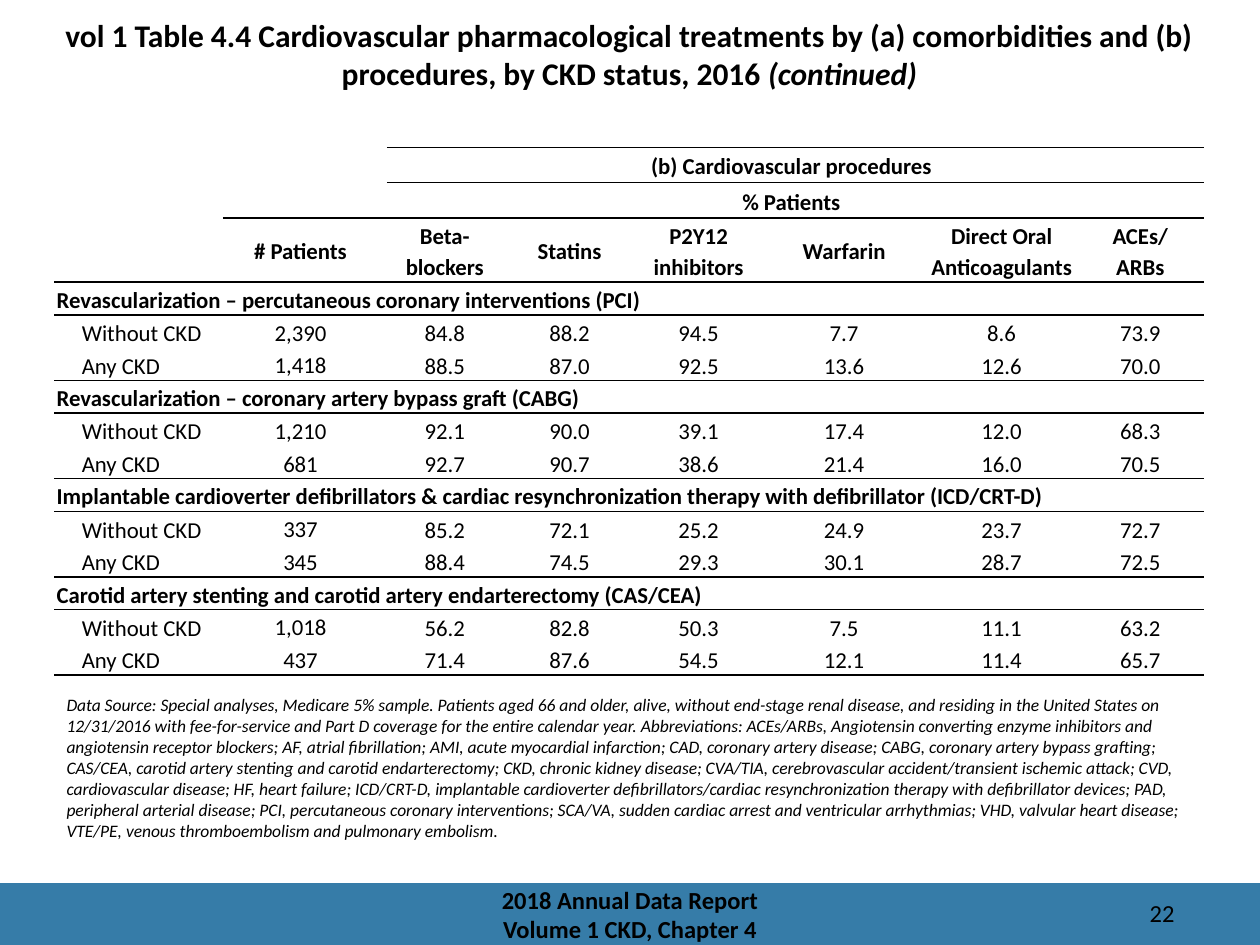
from typing import NamedTuple

import pptx
import pptx.dml.color
import pptx.enum.shapes
import pptx.enum.text
import pptx.oxml
import pptx.oxml.ns
import pptx.util
from pptx.util import Inches

Align = pptx.enum.text.PP_ALIGN
Anchor = pptx.enum.text.MSO_ANCHOR
BLACK, BLUE = "000000", "367CA8"
NO_STYLE = "{2D5ABB26-0587-4C30-8999-92F81FD0307C}"


class Procedure(NamedTuple):
    name: str
    without_ckd: list[str]
    any_ckd: list[str]


class Rule(NamedTuple):
    row: int
    first_column: int
    side: str


DRUGS = ["# Patients", "Beta- blockers", "Statins", "P2Y12 inhibitors",
         "Warfarin", "Direct Oral Anticoagulants", "ACEs/\nARBs"]
PROCEDURES = [
    Procedure("Revascularization – percutaneous coronary interventions (PCI)",
              ["2,390", "84.8", "88.2", "94.5", "7.7", "8.6", "73.9"],
              ["1,418", "88.5", "87.0", "92.5", "13.6", "12.6", "70.0"]),
    Procedure("Revascularization – coronary artery bypass graft (CABG)",
              ["1,210", "92.1", "90.0", "39.1", "17.4", "12.0", "68.3"],
              ["681", "92.7", "90.7", "38.6", "21.4", "16.0", "70.5"]),
    Procedure("Implantable cardioverter defibrillators & cardiac resynchronization "
              "therapy with defibrillator (ICD/CRT-D)",
              ["337", "85.2", "72.1", "25.2", "24.9", "23.7", "72.7"],
              ["345", "88.4", "74.5", "29.3", "30.1", "28.7", "72.5"]),
    Procedure("Carotid artery stenting and carotid artery endarterectomy (CAS/CEA)",
              ["1,018", "56.2", "82.8", "50.3", "7.5", "11.1", "63.2"],
              ["437", "71.4", "87.6", "54.5", "12.1", "11.4", "65.7"]),
]
COLUMN_WIDTHS = [1.34, 1.3, 0.99, 0.99, 1.06, 1.25, 1.25, 0.95]
HEADER_HEIGHTS = [0.28, 0.28, 0.51]
HEADERS, BODY_ROWS = len(HEADER_HEIGHTS), 3 * len(PROCEDURES)
ROW_HEIGHTS = HEADER_HEIGHTS + [0.26] * BODY_ROWS
LAST_COLUMN, LAST_ROW = len(COLUMN_WIDTHS) - 1, len(ROW_HEIGHTS) - 1

DATA_SOURCE = (
    "Data Source: Special analyses, Medicare 5% sample. Patients aged 66 and older, alive, "
    "without end-stage renal disease, and residing in the United States on 12/31/2016 with "
    "fee-for-service and Part D coverage for the entire calendar year.")
ABBREVIATIONS = [
    "ACEs/ARBs, Angiotensin converting enzyme inhibitors and angiotensin receptor blockers",
    "AF, atrial fibrillation",
    "AMI, acute myocardial infarction",
    "CAD, coronary artery disease",
    "CABG, coronary artery bypass grafting",
    "CAS/CEA, carotid artery stenting and carotid endarterectomy",
    "CKD, chronic kidney disease",
    "CVA/TIA, cerebrovascular accident/transient ischemic attack",
    "CVD, cardiovascular disease",
    "HF, heart failure",
    "ICD/CRT-D, implantable cardioverter defibrillators/cardiac resynchronization therapy "
    "with defibrillator devices",
    "PAD, peripheral arterial disease",
    "PCI, percutaneous coronary interventions",
    "SCA/VA, sudden cardiac arrest and ventricular arrhythmias",
    "VHD, valvular heart disease",
    "VTE/PE, venous thromboembolism and pulmonary embolism",
]


def color(value: str) -> pptx.dml.color.RGBColor:
    return pptx.dml.color.RGBColor.from_string(value)


def style(paragraph, size: float, bold=False, italic=False, align=Align.LEFT) -> None:
    paragraph.alignment = align
    font = paragraph.font
    font.name, font.size = "Calibri", pptx.util.Pt(size)
    font.bold, font.italic = bold, italic
    font.color.rgb = color(BLACK)


def add_text(slide, box: tuple, text: str, size: float, anchor=Anchor.TOP, **look) -> None:
    frame = slide.shapes.add_textbox(*map(Inches, box)).text_frame
    frame.word_wrap, frame.vertical_anchor = True, anchor
    frame.text = text
    for paragraph in frame.paragraphs:
        style(paragraph, size, **look)


def write_cell(cell, text: str, bold=False, align=Align.CENTER,
               anchor=Anchor.MIDDLE, indent: float = 0) -> None:
    cell.text = text
    cell.vertical_anchor = anchor
    for paragraph in cell.text_frame.paragraphs:
        style(paragraph, 13, bold=bold, align=align)
        paragraph.line_spacing = 1.15
        if indent:
            paragraph._p.get_or_add_pPr().set("marL", str(Inches(indent)))


def draw_rule(table, rule: Rule) -> None:
    for column in range(rule.first_column, LAST_COLUMN + 1):
        properties = table.cell(rule.row, column)._tc.get_or_add_tcPr()
        properties.append(pptx.oxml.parse_xml(
            f'<a:{rule.side} {pptx.oxml.ns.nsdecls("a")} w="12700"><a:solidFill>'
            f'<a:srgbClr val="{BLACK}"/></a:solidFill></a:{rule.side}>'))


def add_treatment_table(slide) -> None:
    frame = slide.shapes.add_table(
        len(ROW_HEIGHTS), len(COLUMN_WIDTHS), Inches(0.43), Inches(1.17),
        Inches(sum(COLUMN_WIDTHS)), Inches(sum(ROW_HEIGHTS)))
    table = frame.table
    table.first_row = table.horz_banding = False
    table._tbl.tblPr.find(pptx.oxml.ns.qn("a:tableStyleId")).text = NO_STYLE
    for column, width in zip(table.columns, COLUMN_WIDTHS):
        column.width = Inches(width)
    for row, height in zip(table.rows, ROW_HEIGHTS):
        row.height = Inches(height)

    # Rules above and below the headers, above each procedure, below the table
    rules = [Rule(0, 2, "lnT"), Rule(0, 2, "lnB"), Rule(1, 2, "lnT"), Rule(1, 1, "lnB"),
             Rule(2, 1, "lnT"), Rule(2, 0, "lnB")]
    rules += [Rule(HEADERS + 3 * i, 0, "lnT") for i in range(len(PROCEDURES))]
    for rule in rules + [Rule(LAST_ROW, 0, "lnB")]:
        draw_rule(table, rule)
    for cell in table.iter_cells():
        cell.fill.background()
        cell.margin_left, cell.margin_right = Inches(0.02), Inches(0.09)
        cell.margin_top = cell.margin_bottom = 0
        write_cell(cell, "")

    # Headers
    table.cell(0, 0).merge(table.cell(2, 0))
    table.cell(0, 1).merge(table.cell(1, 1))
    for row, heading in enumerate(["(b) Cardiovascular procedures", "% Patients"]):
        table.cell(row, 2).merge(table.cell(row, LAST_COLUMN))
        write_cell(table.cell(row, 2), heading, bold=True)
    for column, drug in enumerate(DRUGS, start=1):
        write_cell(table.cell(2, column), drug, bold=True)

    # Procedures, each a heading row and two value rows
    for i, procedure in enumerate(PROCEDURES):
        top = HEADERS + 3 * i
        table.cell(top, 0).merge(table.cell(top, LAST_COLUMN))
        write_cell(table.cell(top, 0), procedure.name, bold=True, align=Align.LEFT)
        groups = [("Without CKD", procedure.without_ckd), ("Any CKD", procedure.any_ckd)]
        for row, (status, values) in enumerate(groups, start=top + 1):
            write_cell(table.cell(row, 0), status, align=Align.LEFT,
                       anchor=Anchor.BOTTOM, indent=0.2)
            for column, value in enumerate(values, start=1):
                anchor = Anchor.MIDDLE if column == 1 else Anchor.BOTTOM
                write_cell(table.cell(row, column), value, anchor=anchor)


def main() -> None:
    presentation = pptx.Presentation()
    presentation.slide_width, presentation.slide_height = Inches(10), Inches(7.5)
    slide = presentation.slides.add_slide(presentation.slide_layouts[5])

    # Title
    title = slide.shapes.title
    title.left, title.top, title.width, title.height = map(Inches, (0.35, 0.08, 9.29, 0.62))
    title.text_frame.vertical_anchor = Anchor.TOP
    title.text_frame.auto_size = pptx.enum.text.MSO_AUTO_SIZE.NONE
    heading = title.text_frame.paragraphs[0]
    heading.add_run().text = (
        "vol 1 Table 4.4 Cardiovascular pharmacological treatments by (a) comorbidities "
        "and (b) procedures, by CKD status, 2016 ")
    continued = heading.add_run()
    continued.text = "(continued)"
    style(heading, 18, bold=True, align=Align.CENTER)
    continued.font.italic = True

    # Table and its notes
    add_treatment_table(slide)
    notes = f"{DATA_SOURCE} Abbreviations: {'; '.join(ABBREVIATIONS)}."
    add_text(slide, (0.43, 5.46, 9.13, 1.46), notes, 10, italic=True)

    # Footer
    band = slide.shapes.add_shape(pptx.enum.shapes.MSO_SHAPE.RECTANGLE, 0, Inches(7.01),
                                  Inches(10), Inches(0.5))
    band.shadow.inherit = False
    band.fill.solid()
    band.fill.fore_color.rgb = color(BLUE)
    band.line.fill.background()
    add_text(slide, (3.31, 7.01, 3.38, 0.49), "2018 Annual Data Report\nVolume 1 CKD, Chapter 4",
             14, anchor=Anchor.MIDDLE, bold=True, align=Align.CENTER)
    add_text(slide, (8.42, 7.08, 1, 0.3), "22", 14, align=Align.RIGHT)

    presentation.save("out.pptx")


if __name__ == "__main__":
    main()
